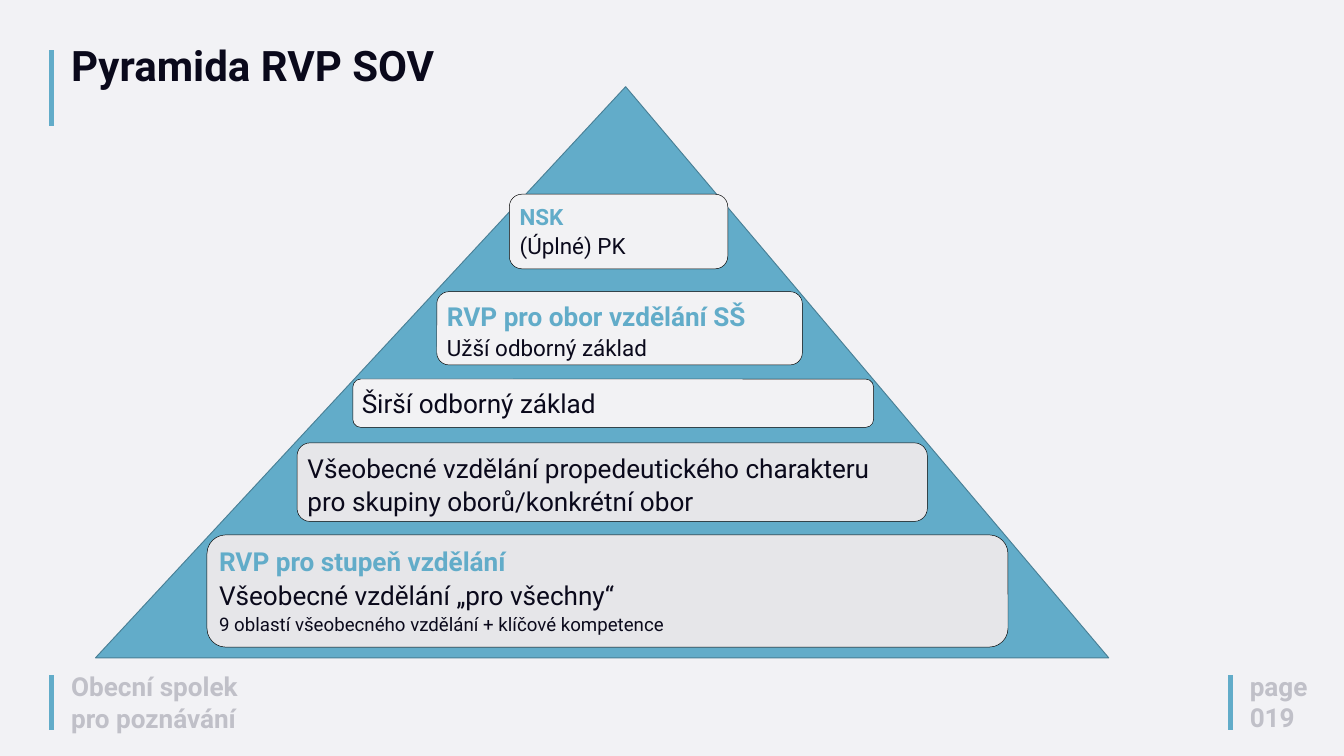
from dataclasses import dataclass

from lxml.etree import SubElement
from pptx import Presentation
from pptx.dml.color import RGBColor
from pptx.enum.shapes import MSO_CONNECTOR as Connector, MSO_SHAPE as Preset
from pptx.enum.text import MSO_ANCHOR as Anchor, PP_ALIGN as Align
from pptx.oxml.ns import qn
from pptx.shapes.autoshape import Shape
from pptx.slide import Slide
from pptx.text.text import TextFrame
from pptx.util import Inches, Pt


@dataclass(frozen=True)
class Theme:
    font: str = "Roboto"
    background: str = "F2F2F5"
    accent: str = "62ACC9"
    accent_edge: str = "497F95"
    ink: str = "0A091B"
    muted: str = "C0C0C8"
    light: str = "F2F2F4"
    grey: str = "E6E6E9"
    edge: str = "000000"
    title: int = 45
    large: int = 28
    medium: int = 24
    small: int = 20


THEME = Theme()


@dataclass(frozen=True)
class Line:
    text: str
    size: int = THEME.large
    color: str = THEME.ink
    bold: bool = False


@dataclass(frozen=True)
class Area:
    left: float
    top: float
    width: float
    height: float

    def lengths(self) -> list[Inches]:
        return [Inches(n) for n in (self.left, self.top, self.width, self.height)]


@dataclass(frozen=True)
class Level:
    area: Area
    fill: str
    lines: tuple[Line, ...]


@dataclass(frozen=True)
class Label:
    area: Area
    lines: tuple[Line, ...]
    spacing: float = 1.0


@dataclass(frozen=True)
class Bar:
    x: float
    top: float
    bottom: float


def heading(text: str, size: int = THEME.large) -> Line:
    return Line(text, size, THEME.accent, True)


def footer(text: str) -> Line:
    return Line(text, THEME.large, THEME.muted, True)


BARS = (
    Bar(0.77, 0.75, 1.88),
    Bar(0.77, 10.05, 10.86),
    Bar(18.31, 10.05, 10.86),
)
LABELS = (
    Label(Area(0.96, 9.93, 3.04, 1.04), (footer("Obecní spolek pro poznávání"),)),
    Label(Area(0.96, 0.62, 5.96, 0.78),
          (Line("Pyramida RVP SOV", THEME.title, THEME.ink, True),), 0.9),
    Label(Area(18.5, 9.92, 1.9, 1.04), (footer("page"), footer("019"))),
)
PYRAMID = Area(1.42, 1.29, 15.08, 8.5)
APEX_OFFSET = 7.89
LEVELS = (
    Level(Area(3.08, 7.96, 11.92, 1.67), THEME.grey, (
        heading("RVP pro stupeň vzdělání"),
        Line("Všeobecné vzdělání „pro všechny“"),
        Line("9 oblastí všeobecného vzdělání + klíčové kompetence", THEME.small),
    )),
    Level(Area(4.42, 6.59, 9.38, 1.17), THEME.grey, (
        Line("Všeobecné vzdělání propedeutického charakteru"),
        Line("pro skupiny oborů/konkrétní obor"),
    )),
    Level(Area(5.25, 5.64, 7.75, 0.72), THEME.light, (Line("Širší odborný základ"),)),
    Level(Area(6.5, 4.34, 5.44, 1.09), THEME.light, (
        heading("RVP pro obor vzdělání SŠ"),
        Line("Užší odborný základ", THEME.medium),
    )),
    Level(Area(7.58, 2.89, 3.25, 1.11), THEME.light, (
        heading("NSK", THEME.medium),
        Line("(Úplné) PK", THEME.medium),
    )),
)
LEVEL_SPACING = 1.07


def rgb(color: str) -> RGBColor:
    return RGBColor.from_string(color)


def write(frame: TextFrame, lines: tuple[Line, ...], spacing: float) -> None:
    frame.word_wrap = True
    frame.vertical_anchor = Anchor.TOP
    for index, line in enumerate(lines):
        para = frame.paragraphs[0] if index == 0 else frame.add_paragraph()
        para.text = line.text
        para.alignment = Align.LEFT
        para.line_spacing = spacing
        para.font.name = THEME.font
        para.font.size = Pt(line.size)
        para.font.bold = line.bold
        para.font.color.rgb = rgb(line.color)


def draw_bar(page: Slide, bar: Bar) -> None:
    x = Inches(bar.x)
    stroke = page.shapes.add_connector(
        Connector.STRAIGHT, x, Inches(bar.top), x, Inches(bar.bottom))
    stroke.line.color.rgb = rgb(THEME.accent)
    stroke.line.width = Pt(5)
    SubElement(stroke._element.spPr, qn("a:effectLst"))


def draw_label(page: Slide, label: Label) -> None:
    box = page.shapes.add_textbox(*label.area.lengths())
    write(box.text_frame, label.lines, label.spacing)


def draw_shape(page: Slide, preset: Preset, area: Area, fill: str,
               edge: str, width: float) -> Shape:
    shape = page.shapes.add_shape(preset, *area.lengths())
    shape.shadow.inherit = False
    shape.fill.solid()
    shape.fill.fore_color.rgb = rgb(fill)
    shape.line.color.rgb = rgb(edge)
    shape.line.width = Pt(width)
    return shape


def draw_level(page: Slide, level: Level) -> None:
    box = draw_shape(page, Preset.ROUNDED_RECTANGLE, level.area,
                     level.fill, THEME.edge, 0.5)
    write(box.text_frame, level.lines, LEVEL_SPACING)


def main() -> None:
    deck = Presentation()
    deck.slide_width, deck.slide_height = Inches(20), Inches(11.25)
    page = deck.slides.add_slide(deck.slide_layouts[6])
    page.background.fill.solid()
    page.background.fill.fore_color.rgb = rgb(THEME.background)

    for bar in BARS:
        draw_bar(page, bar)
    for label in LABELS:
        draw_label(page, label)
    pyramid = draw_shape(page, Preset.ISOSCELES_TRIANGLE, PYRAMID,
                         THEME.accent, THEME.accent_edge, 1)
    pyramid.adjustments[0] = APEX_OFFSET / PYRAMID.width
    for level in LEVELS:
        draw_level(page, level)

    deck.save("out.pptx")


if __name__ == "__main__":
    main()
